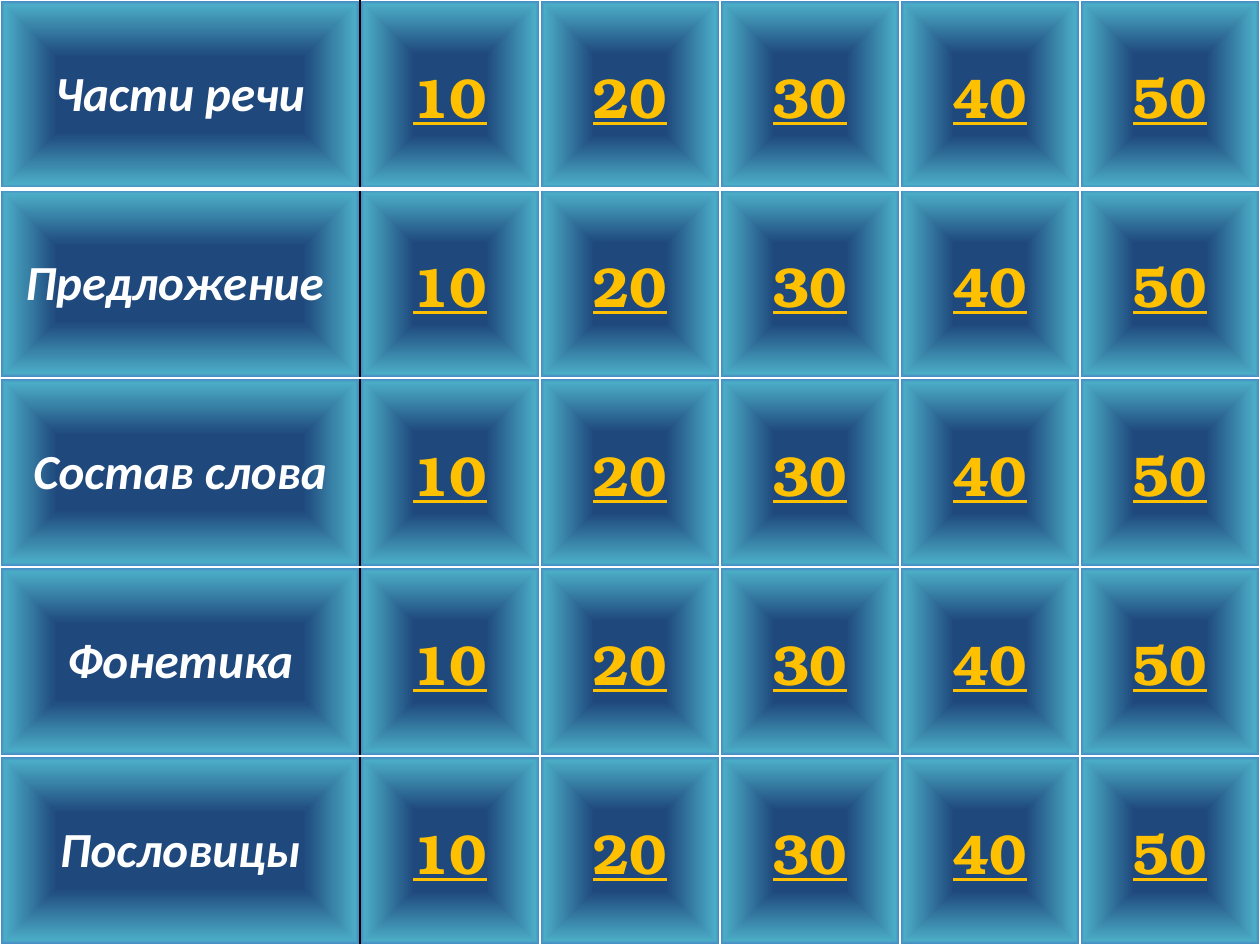
from lxml import etree
from pptx import Presentation
from pptx import util as u
from pptx.dml.color import RGBColor
from pptx.enum import text
from pptx.oxml import ns


class Theme:
    """Colours, type and line widths of the game board."""
    rule, split = "FFFFFF", "000000"
    thin, thick = 1, 3
    glow = ((40, "1F497D"), (95, "4BACC6"), (100, "4780C5"))
    topic = {"name": "Calibri", "size": u.Pt(28), "bold": True, "italic": True}
    score = {"name": "TeX Gyre Bonum", "size": u.Pt(32), "bold": True,
             "italic": False, "underline": True}
    topic_ink, score_ink = "FFFFFF", "FFC000"


TOPICS = ("Части речи", "Предложение ", "Состав слова", "Фонетика", "Пословицы")
SCORES = ("10", "20", "30", "40", "50")


def add(node, tag, **attrs):
    """Append a drawing element with its attributes and return it."""
    child = etree.SubElement(node, ns.qn("a:" + tag))
    for key, val in attrs.items():
        child.set(key, str(val))
    return child


def paint(node, ink):
    """Add a solid fill."""
    add(add(node, "solidFill"), "srgbClr", val=ink)


def edge(cell, side, ink, width):
    """Draw one border of a cell."""
    paint(add(cell._tc.get_or_add_tcPr(), "ln" + side, w=u.Pt(width)), ink)


def glow(cell):
    """Fill a cell with the gradient that runs out from its centre."""
    grad = add(cell._tc.get_or_add_tcPr(), "gradFill", rotWithShape=1)
    stops = add(grad, "gsLst")
    for pos, ink in Theme.glow:
        add(add(stops, "gs", pos=pos * 1000), "srgbClr", val=ink)
    mid = dict.fromkeys("ltrb", 50000)
    add(add(grad, "path", path="shape"), "fillToRect", **mid)


def write(cell, words, style, ink):
    """Put centred, styled text in a cell."""
    cell.vertical_anchor = text.MSO_ANCHOR.MIDDLE
    para = cell.text_frame.paragraphs[0]
    para.alignment = text.PP_ALIGN.CENTER
    run = para.add_run()
    run.text = words
    for key, val in style.items():
        setattr(run.font, key, val)
    run.font.color.rgb = RGBColor.from_string(ink)


def frame(cell, row, col):
    """Border a cell by its place on the board."""
    inks = {"L": Theme.split if col == 1 else Theme.rule,
            "R": Theme.split if col == 0 else Theme.rule,
            "T": Theme.rule, "B": Theme.rule}
    heavy = {0: "B", 1: "T"}.get(row)
    for side, ink in inks.items():
        edge(cell, side, ink, Theme.thick if side == heavy else Theme.thin)


def board(slide, left, top, width, height):
    """Lay out topics down the side and their scores across."""
    rows, cols = len(TOPICS), len(SCORES) + 1
    grid = slide.shapes.add_table(rows, cols, left, top, width, height).table
    grid.first_row = grid.horz_banding = False
    unit = width // (cols + 1)
    for col, part in enumerate(grid.columns):
        part.width = unit if col else width - unit * (cols - 1)
    for row, topic in enumerate(TOPICS):
        grid.rows[row].height = height // rows
        for col, words in enumerate((topic, *SCORES)):
            cell = grid.cell(row, col)
            style, ink = ((Theme.score, Theme.score_ink) if col
                          else (Theme.topic, Theme.topic_ink))
            write(cell, words, style, ink)
            frame(cell, row, col)
            glow(cell)


def main():
    """Build and save the slide."""
    deck = Presentation()
    deck.slide_width, deck.slide_height = u.Cm(25.4), u.Cm(19.05)
    slide = deck.slides.add_slide(deck.slide_layouts[6])
    board(slide, u.Cm(0), u.Cm(0), deck.slide_width, deck.slide_height)
    deck.save("out.pptx")


if __name__ == "__main__":
    main()
